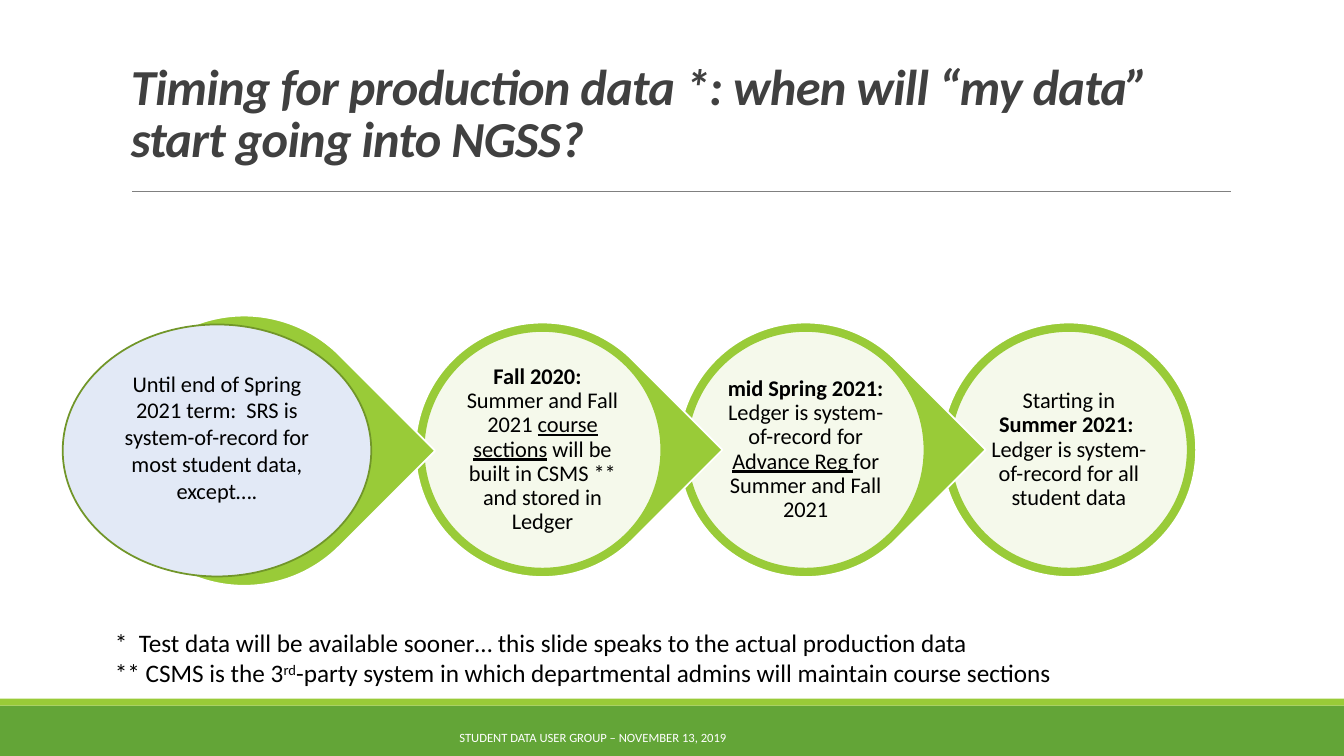
from dataclasses import dataclass, field

from lxml import etree
from pptx import Presentation
from pptx.dml.color import RGBColor
from pptx.enum.shapes import MSO_CONNECTOR, MSO_SHAPE
from pptx.enum.text import MSO_ANCHOR, PP_ALIGN
from pptx.oxml.ns import qn
from pptx.util import Pt

RECT, OVAL, DROP = MSO_SHAPE.RECTANGLE, MSO_SHAPE.OVAL, MSO_SHAPE.TEAR
LINE = MSO_CONNECTOR.STRAIGHT
TOP, MID, LOW = MSO_ANCHOR.TOP, MSO_ANCHOR.MIDDLE, MSO_ANCHOR.BOTTOM
LEFT, MIDST = PP_ALIGN.LEFT, PP_ALIGN.CENTER
COLORS = {
    "green": "63A537", "lime": "99CB38", "moss": "719629", "sky": "E2E9F6",
    "white": "FFFFFF", "black": "000000", "dark": "404040", "gray": "808080",
}
BOLD, UNDER = {"bold": True}, {"underline": True}
PAD = (7.2, 3.6, 7.2, 3.6)
SIDES = ("margin_left", "margin_top", "margin_right", "margin_bottom")


@dataclass
class Run:
    text: str
    form: dict = field(default_factory=dict)
    attrs: dict = field(default_factory=dict)


@dataclass
class Style:
    size: float
    color: str = "black"
    align: int = MIDST
    anchor: int = MID
    space: float = 1.0
    pad: tuple = PAD


@dataclass
class Box:
    left: float
    top: float
    width: float
    height: float

    def inset(self, gap: float) -> "Box":
        return Box(self.left + gap, self.top + gap,
                   self.width - 2 * gap, self.height - 2 * gap)

    def points(self) -> list:
        return [Pt(n) for n in (self.left, self.top, self.width, self.height)]


TITLE = Style(36, "dark", LEFT, LOW, 0.85)
STAGE = Style(16, space=0.9, pad=(1.5,) * 4)
FIRST = Style(16, pad=(7.2, 3.6, 7.2, 23))
NOTE = Style(18, align=LEFT, anchor=TOP)
FOOT = Style(9, "white")

STAGES = [
    [Run("Fall 2020:  \v", BOLD), Run("Summer and Fall 2021 "),
     Run("course sections", UNDER),
     Run(" will be built in CSMS ** and stored in Ledger")],
    [Run("mid Spring 2021: ", BOLD), Run("Ledger is system-of-record for "),
     Run("Advance Reg ", UNDER), Run("for Summer and Fall 2021")],
    [Run("Starting in "), Run("Summer 2021:  ", BOLD),
     Run("Ledger is system-of-record for all student data")],
]
NOTES = [
    Run("*  Test data will be available sooner… this slide speaks to the "
        "actual production data\v** CSMS is the 3"),
    Run("rd", attrs={"baseline": "30000"}),
    Run("-party system in which departmental admins will maintain "
        "course sections"),
]


def tint(name: str) -> RGBColor:
    return RGBColor.from_string(COLORS[name])


def write(shape, runs: list[Run], style: Style) -> None:
    frame = shape.text_frame
    frame.word_wrap = True
    frame.vertical_anchor = style.anchor
    for side, pad in zip(SIDES, style.pad):
        setattr(frame, side, Pt(pad))
    para = frame.paragraphs[0]
    para.alignment = style.align
    para.line_spacing = style.space
    for run in runs:
        for num, text in enumerate(run.text.split("\v")):
            if num:
                para.add_line_break()
            if not text:
                continue
            part = para.add_run()
            part.text = text
            font = part.font
            font.color.rgb = tint(style.color)
            form = {"name": "Calibri", "size": Pt(style.size), **run.form}
            for key, value in form.items():
                setattr(font, key, value)
            for key, value in run.attrs.items():
                part._r.get_or_add_rPr().set(key, value)


def label(slide, box: Box, runs: list[Run], style: Style) -> None:
    write(slide.shapes.add_textbox(*box.points()), runs, style)


def draw(slide, kind: int, box: Box, fill: str, edge: str = "",
         alpha: int = 100):
    """Add a filled shape; alpha is its opacity in percent."""
    shape = slide.shapes.add_shape(kind, *box.points())
    shape.shadow.inherit = False
    shape.fill.solid()
    shape.fill.fore_color.rgb = tint(fill)
    if alpha < 100:
        color = shape._element.spPr.find(qn("a:solidFill"))[0]
        etree.SubElement(color, qn("a:alpha"), val=str(alpha * 1000))
    if edge:
        shape.line.color.rgb = tint(edge)
        shape.line.width = Pt(1.25)
    else:
        shape.line.fill.background()
    if kind == DROP:
        shape.rotation = 45
    return shape


def rule(slide, left: float, right: float, top: float) -> None:
    line = slide.shapes.add_connector(LINE, Pt(left), Pt(top),
                                      Pt(right), Pt(top))
    line.line.color.rgb = tint("gray")
    line.line.width = Pt(0.5)
    etree.SubElement(line._element.spPr, qn("a:effectLst"))


def chain(slide) -> None:
    """Draw the stages from right to left so each tip overlaps the next."""
    last = len(STAGES) - 1
    for num in range(last, -1, -1):
        box = Box(296.6 + 188 * num, 230.4, 181.8, 181.8)
        draw(slide, OVAL if num == last else DROP, box, "lime", "white")
        draw(slide, OVAL, box.inset(6), "white", "lime", 90)
        label(slide, box.inset(30.4), STAGES[num], STAGE)


def main() -> None:
    deck = Presentation()
    deck.slide_width, deck.slide_height = Pt(960), Pt(540)
    slide = deck.slides.add_slide(deck.slide_layouts[6])

    draw(slide, RECT, Box(0, 504, 960, 36), "green")
    draw(slide, RECT, Box(0, 499, 960, 5), "lime")
    rule(slide, 94.4, 879, 136.6)
    title = Run("Timing for production data *: when will “my data” "
                "start going into NGSS?",
                {"bold": True, "italic": True}, {"spc": "-50"})
    label(slide, Box(86.4, 33.8, 792, 89.3), [title], TITLE)

    chain(slide)
    draw(slide, DROP, Box(77.8, 225.4, 193, 193), "lime", "white")
    start = draw(slide, OVAL, Box(44.8, 231.8, 220.4, 180), "sky", "moss")
    write(start, [Run("Until end of Spring 2021 term:  SRS is "
                      "system-of-record for most student data, except….")],
          FIRST)

    label(slide, Box(75, 444.4, 801.4, 51), NOTES, NOTE)
    label(slide, Box(302.4, 517.7, 242, 18.7),
          [Run("STUDENT DATA USER GROUP – NOVEMBER 13, 2019")], FOOT)
    deck.save("out.pptx")


if __name__ == "__main__":
    main()
